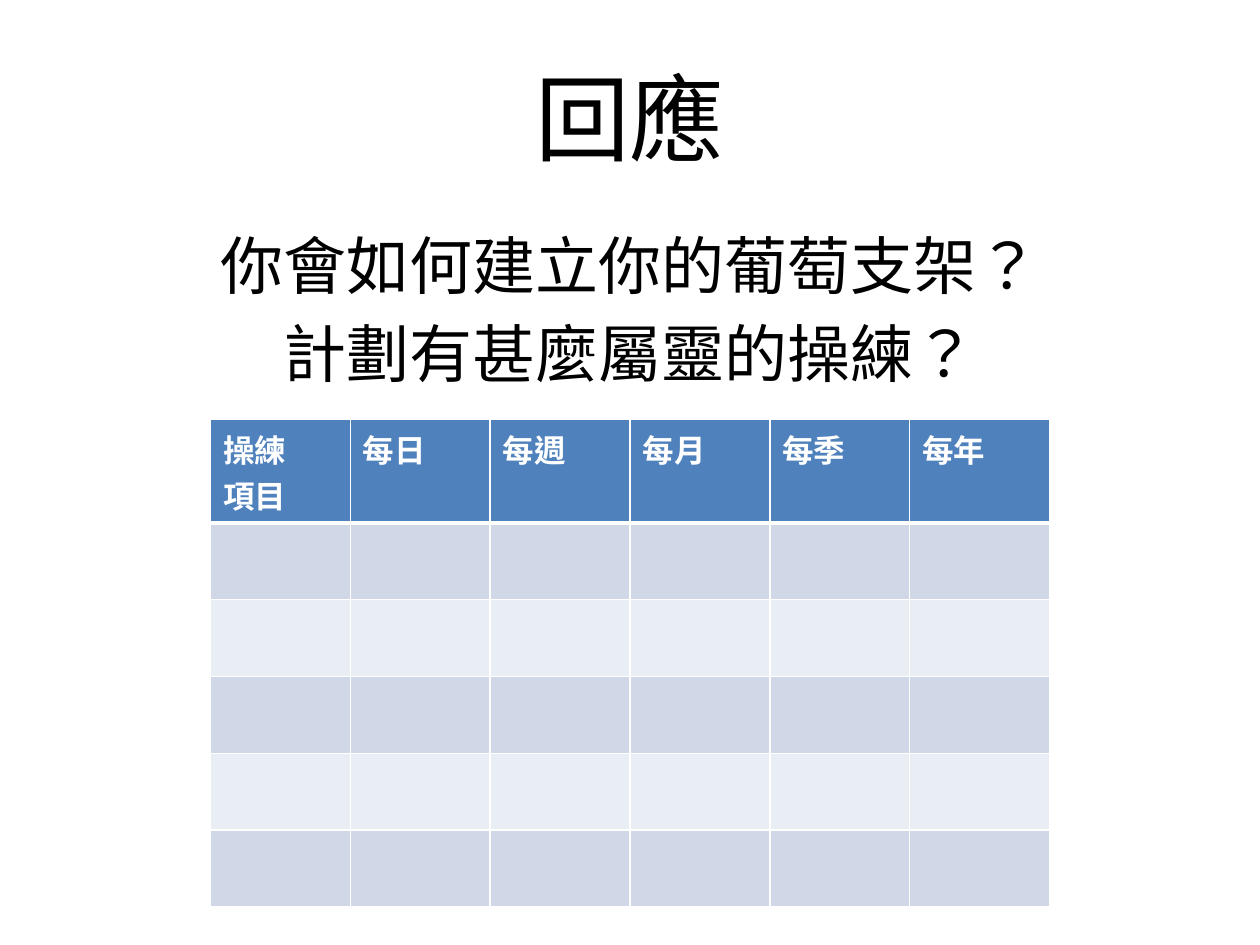
from dataclasses import dataclass

from lxml import etree
from pptx import Presentation
from pptx.dml.color import RGBColor
from pptx.enum.text import MSO_ANCHOR, PP_ALIGN
from pptx.oxml.ns import qn
from pptx.util import Inches, Pt

CENTER, LEFT = PP_ALIGN.CENTER, PP_ALIGN.LEFT
TOP, MIDDLE = MSO_ANCHOR.TOP, MSO_ANCHOR.MIDDLE


@dataclass(frozen=True)
class Theme:
    heading_font: str = "Lato"
    table_font: str = "Calibri"
    language: str = "zh-TW"
    ink: str = "000000"
    white: str = "FFFFFF"
    header_fill: str = "4F81BD"
    bands: tuple = ("D0D8E8", "E9EDF4")
    title_size: float = 54
    question_size: float = 36
    table_size: float = 18
    rule: float = 1
    header_rule: float = 3


@dataclass(frozen=True)
class TextBlock:
    lines: tuple
    top: float
    height: float
    size: float
    anchor: MSO_ANCHOR
    space_before: float = 0


THEME = Theme()
BLOCKS = (
    TextBlock(("回應",), 0.3, 1.25, THEME.title_size, MIDDLE),
    TextBlock(("你會如何建立你的葡萄支架？", "計劃有甚麼屬靈的操練？"), 1.75, 4.95,
              THEME.question_size, TOP, THEME.question_size * 0.2),
)
HEADERS = ("操練\n項目", "每日", "每週", "每月", "每季", "每年")
PRACTICE_ROWS = 5
COLUMN_WIDTH, HEADER_HEIGHT, ROW_HEIGHT = 1.11, 0.82, 0.61


def apply_format(target, values: dict) -> None:
    for name, value in values.items():
        setattr(target, name, value)


def write_lines(frame, lines, paragraph_format: dict, font_format: dict, color: str) -> None:
    frame.text = "\n".join(lines)
    for paragraph in frame.paragraphs:
        apply_format(paragraph, paragraph_format)
        for run in paragraph.runs:
            apply_format(run.font, font_format)
            run.font.color.rgb = RGBColor.from_string(color)
            # Traditional Chinese centres the full-width punctuation
            run.font._element.set("lang", THEME.language)


def add_text_block(slide, block: TextBlock) -> None:
    box = slide.shapes.add_textbox(Inches(0.5), Inches(block.top), Inches(9), Inches(block.height))
    frame = box.text_frame
    apply_format(frame, {"word_wrap": True, "vertical_anchor": block.anchor})
    write_lines(frame, block.lines,
                {"alignment": CENTER, "space_before": Pt(block.space_before)},
                {"size": Pt(block.size), "name": THEME.heading_font}, THEME.ink)
    # The Chinese glyphs take the heading font too
    for paragraph in frame.paragraphs:
        for run in paragraph.runs:
            latin = run.font._element.find(qn("a:latin"))
            east_asian = etree.Element(qn("a:ea"), typeface=THEME.heading_font)
            latin.addnext(east_asian)


def style_cell(cell, fill: str, top_rule: float, bottom_rule: float) -> None:
    properties = cell._tc.get_or_add_tcPr()
    rules = {"L": THEME.rule, "R": THEME.rule, "T": top_rule, "B": bottom_rule}
    for side, width in rules.items():
        line = etree.SubElement(properties, qn(f"a:ln{side}"), w=str(Pt(width)))
        solid = etree.SubElement(line, qn("a:solidFill"))
        etree.SubElement(solid, qn("a:srgbClr"), val=THEME.white)
    cell.fill.solid()
    cell.fill.fore_color.rgb = RGBColor.from_string(fill)


def add_practice_table(slide) -> None:
    table = slide.shapes.add_table(
        PRACTICE_ROWS + 1, len(HEADERS), Inches(1.67), Inches(3.33),
        Inches(COLUMN_WIDTH * len(HEADERS)),
        Inches(HEADER_HEIGHT + ROW_HEIGHT * PRACTICE_ROWS)).table
    for column in table.columns:
        column.width = Inches(COLUMN_WIDTH)
    for index, row in enumerate(table.rows):
        row.height = Inches(ROW_HEIGHT if index else HEADER_HEIGHT)
        fill = THEME.bands[(index - 1) % 2] if index else THEME.header_fill
        top_rule = THEME.header_rule if index == 1 else THEME.rule
        bottom_rule = THEME.header_rule if index == 0 else THEME.rule
        for cell in row.cells:
            style_cell(cell, fill, top_rule, bottom_rule)
    # Header labels
    for column, label in enumerate(HEADERS):
        write_lines(table.cell(0, column).text_frame, label.split("\n"), {"alignment": LEFT},
                    {"size": Pt(THEME.table_size), "name": THEME.table_font, "bold": True},
                    THEME.white)


def main() -> None:
    deck = Presentation()
    apply_format(deck, {"slide_width": Inches(10), "slide_height": Inches(7.5)})
    slide = deck.slides.add_slide(deck.slide_layouts[6])
    # Title and questions
    for block in BLOCKS:
        add_text_block(slide, block)
    # Plan of practices
    add_practice_table(slide)
    deck.save("out.pptx")


if __name__ == "__main__":
    main()
